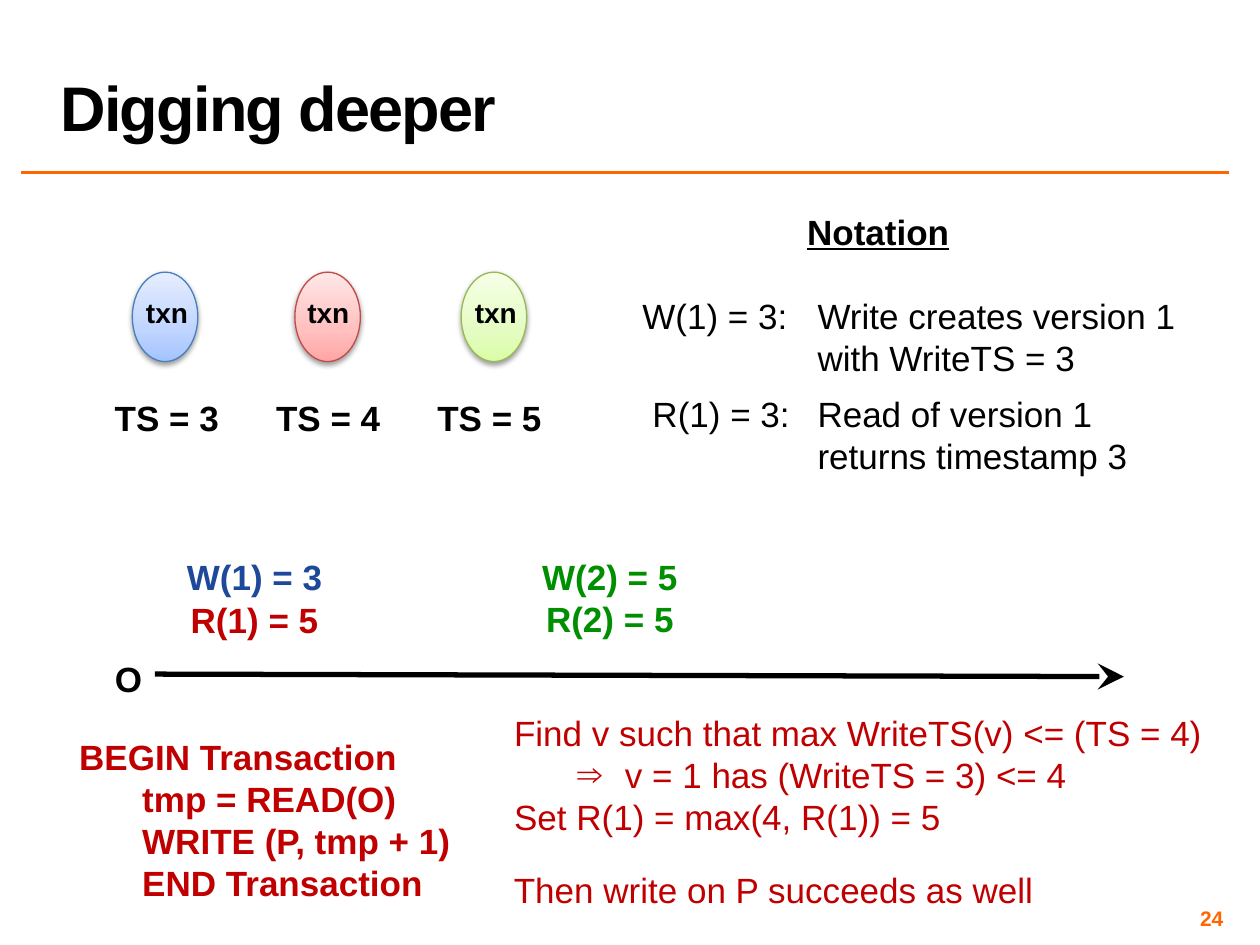
import pptx
import pptx.util
import pptx.dml.color
import pptx.enum.shapes
import pptx.enum.text
import pptx.oxml.ns
from dataclasses import dataclass
from lxml import etree

Inches = pptx.util.Inches
Pt = pptx.util.Pt
qn = pptx.oxml.ns.qn
Align = pptx.enum.text.PP_ALIGN
Anchor = pptx.enum.text.MSO_ANCHOR


@dataclass(frozen=True)
class Theme:
    font: str = "Arial"
    title_size: int = 36
    text_size: int = 20
    label_size: int = 16
    number_size: int = 12
    black: str = "000000"
    orange: str = "FF6600"
    red: str = "C00000"
    green: str = "008F00"
    blue: str = "1E4899"


THEME = Theme()

TRANSACTIONS = [
    ("TS = 3", 1.05, 0.85, 0.81, "4B7EBC", ("A4C4FF", "BFD4FF", "E6EEFF")),
    ("TS = 4", 2.34, 2.13, 2.09, "BF4C48", ("FFA6A5", "FFC0BF", "FFE7E7")),
    ("TS = 5", 3.66, 3.46, 3.37, "98B955", ("DAFDA7", "E4FCC2", "F5FFE7")),
]


def rgb(value):
    return pptx.dml.color.RGBColor.from_string(value)


def add_element(parent, tag, **attributes):
    element = etree.SubElement(parent, qn(tag))
    for name, value in attributes.items():
        element.set(name, str(value))
    return element


def set_attributes(target, values):
    for name, value in values.items():
        setattr(target, name, value)


def place(shape, left, top, width, height):
    bounds = {"left": left, "top": top, "width": width, "height": height}
    set_attributes(shape, {name: Inches(value) for name, value in bounds.items()})


def write_paragraph(paragraph, text, color, size=THEME.text_size, bold=False, underline=False,
                    align=Align.LEFT, spacing=1.0, before=0,
                    margin=0, indent=0, bullet=None, tracking=0):
    paragraph.text = text
    set_attributes(paragraph, {"alignment": align, "line_spacing": spacing,
                               "space_before": Pt(before), "space_after": Pt(0)})
    properties = paragraph._p.get_or_add_pPr()
    properties.set("marL", str(Inches(margin)))
    properties.set("indent", str(Inches(indent)))
    if bullet:
        add_element(properties, "a:buFont", typeface=THEME.font)
        add_element(properties, "a:buChar", char=bullet)
    else:
        add_element(properties, "a:buNone")
    for run in paragraph.runs:
        set_attributes(run.font, {"name": THEME.font, "size": Pt(size),
                                  "bold": bold, "underline": underline})
        run.font.color.rgb = rgb(color)
        if tracking:
            run._r.get_or_add_rPr().set("spc", str(tracking * 100))


def write(shape, lines, wrap=True, anchor=Anchor.TOP, inset=None, **style):
    frame = shape.text_frame
    set_attributes(frame, {"word_wrap": wrap, "vertical_anchor": anchor,
                           "auto_size": pptx.enum.text.MSO_AUTO_SIZE.NONE})
    if inset is not None:
        sides = ("left", "right", "top", "bottom")
        set_attributes(frame, {f"margin_{side}": Inches(inset) for side in sides})
    for index, (text, extra) in enumerate(lines):
        paragraph = frame.add_paragraph() if index else frame.paragraphs[0]
        write_paragraph(paragraph, text, **{**style, **extra})


def add_text(shapes, bounds, lines, **style):
    shape = shapes.add_textbox(*map(Inches, bounds))
    write(shape, lines, **style)


def add_label(shapes, bounds, *texts, color=THEME.black, **style):
    add_text(shapes, bounds, [(text, {}) for text in texts], color=color,
             wrap=False, bold=True, align=Align.CENTER, **style)


def add_line(shapes, start, end, color, width, arrowhead=None):
    line = shapes.add_connector(pptx.enum.shapes.MSO_CONNECTOR.STRAIGHT,
                                *map(Inches, start + end))
    line.line.color.rgb = rgb(color)
    line.line.width = Pt(width)
    if arrowhead:
        add_element(line.line._get_or_add_ln(), "a:tailEnd", type=arrowhead, w="lg", len="lg")
    add_element(line._element.spPr, "a:effectLst")


def fill_gradient(shape, colors):
    shape.fill.gradient()
    shape.fill.gradient_angle = 90
    stops = shape._element.spPr.find(".//" + qn("a:gsLst"))
    for stop in list(stops):
        stops.remove(stop)
    for position, color in zip((0, 35, 100), colors):
        stop = add_element(stops, "a:gs", pos=position * 1000)
        add_element(stop, "a:srgbClr", val=color)


def add_soft_shadow(shape):
    shape.shadow.inherit = False
    effects = shape._element.spPr.find(qn("a:effectLst"))
    shadow = add_element(effects, "a:outerShdw", blurRad=Pt(3.1), dist=Pt(1.6),
                         dir=5400000, rotWithShape=0)
    color = add_element(shadow, "a:srgbClr", val=THEME.black)
    add_element(color, "a:alpha", val=38000)


def add_transaction(slide, timestamp, oval_left, name_left, timestamp_left, outline, colors):
    shapes = slide.shapes.add_group_shape().shapes
    oval = shapes.add_shape(pptx.enum.shapes.MSO_SHAPE.OVAL,
                            *map(Inches, (oval_left, 2.16, 0.52, 0.71)))
    fill_gradient(oval, colors)
    oval.line.color.rgb = rgb(outline)
    oval.line.width = Pt(0.75)
    add_soft_shadow(oval)
    add_label(shapes, (name_left, 2.3, 0.95, 0.31), "txn", size=THEME.label_size)
    add_label(shapes, (timestamp_left, 3.1, 1.03, 0.44), timestamp)


def add_timeline(shapes):
    add_line(shapes, (1.23, 5.35), (8.92, 5.37), THEME.black, 3, "stealth")
    add_label(shapes, (0.81, 5.17, 0.42, 0.44), "O")
    add_label(shapes, (4.2, 4.36, 1.28, 0.77), "W(2) = 5", "R(2) = 5", color=THEME.green)
    add_label(shapes, (1.38, 4.36, 1.28, 0.44), "W(1) = 3", color=THEME.blue)
    add_label(shapes, (1.41, 4.7, 1.22, 0.44), "R(1) = 5", color=THEME.red)


def add_notation(shapes):
    add_text(shapes, (4.39, 1.62, 5.16, 2.23), [
        ("Notation", {"bold": True, "underline": True, "align": Align.CENTER}),
        ("W(1) = 3:\tWrite creates version 1\vwith WriteTS = 3",
         {"before": 24, "margin": 2, "indent": -1.39}),
        ("R(1) = 3:\tRead of version 1\vreturns timestamp 3",
         {"before": 8, "margin": 2, "indent": -1.31}),
    ], color=THEME.black)


def add_explanation(slide):
    step = {"margin": 0.5}
    add_text(slide.shapes, (0.53, 5.79, 3.45, 1.45), [
        ("BEGIN Transaction", {}),
        ("tmp = READ(O)", step),
        ("WRITE (P, tmp + 1)", step),
        ("END Transaction", step),
    ], color=THEME.red, bold=True)
    body = slide.placeholders[1]
    place(body, 3.98, 5.6, 5.7, 1.11)
    write(body, [
        ("Find v such that max WriteTS(v) <= (TS = 4)", {}),
        ("v = 1 has (WriteTS = 3) <= 4", {"margin": 0.88, "indent": -0.38, "bullet": "⇒"}),
        ("Set R(1) = max(4, R(1)) = 5", {}),
    ], color=THEME.red)
    add_text(slide.shapes, (3.98, 6.84, 4.36, 0.44),
             [("Then write on P succeeds as well", {})], color=THEME.red)


def add_frame(slide):
    title = slide.shapes.title
    place(title, 0.38, 0.02, 9.37, 1.17)
    write(title, [("Digging deeper", {})], anchor=Anchor.BOTTOM, color=THEME.black,
          size=THEME.title_size, bold=True, spacing=0.8, tracking=-1)
    add_line(slide.shapes, (0.17, 1.37), (9.75, 1.37), THEME.orange, 2)
    add_text(slide.shapes, (7.42, 7.17, 2.33, 0.23), [("24", {})], anchor=Anchor.MIDDLE,
             inset=0.04, color=THEME.orange, size=THEME.number_size, bold=True,
             align=Align.RIGHT)


def main():
    presentation = pptx.Presentation()
    presentation.slide_width = Inches(10)
    presentation.slide_height = Inches(7.5)
    slide = presentation.slides.add_slide(presentation.slide_layouts[1])
    add_frame(slide)
    for transaction in TRANSACTIONS:
        add_transaction(slide, *transaction)
    add_timeline(slide.shapes)
    add_notation(slide.shapes)
    add_explanation(slide)
    presentation.save("out.pptx")


if __name__ == "__main__":
    main()
